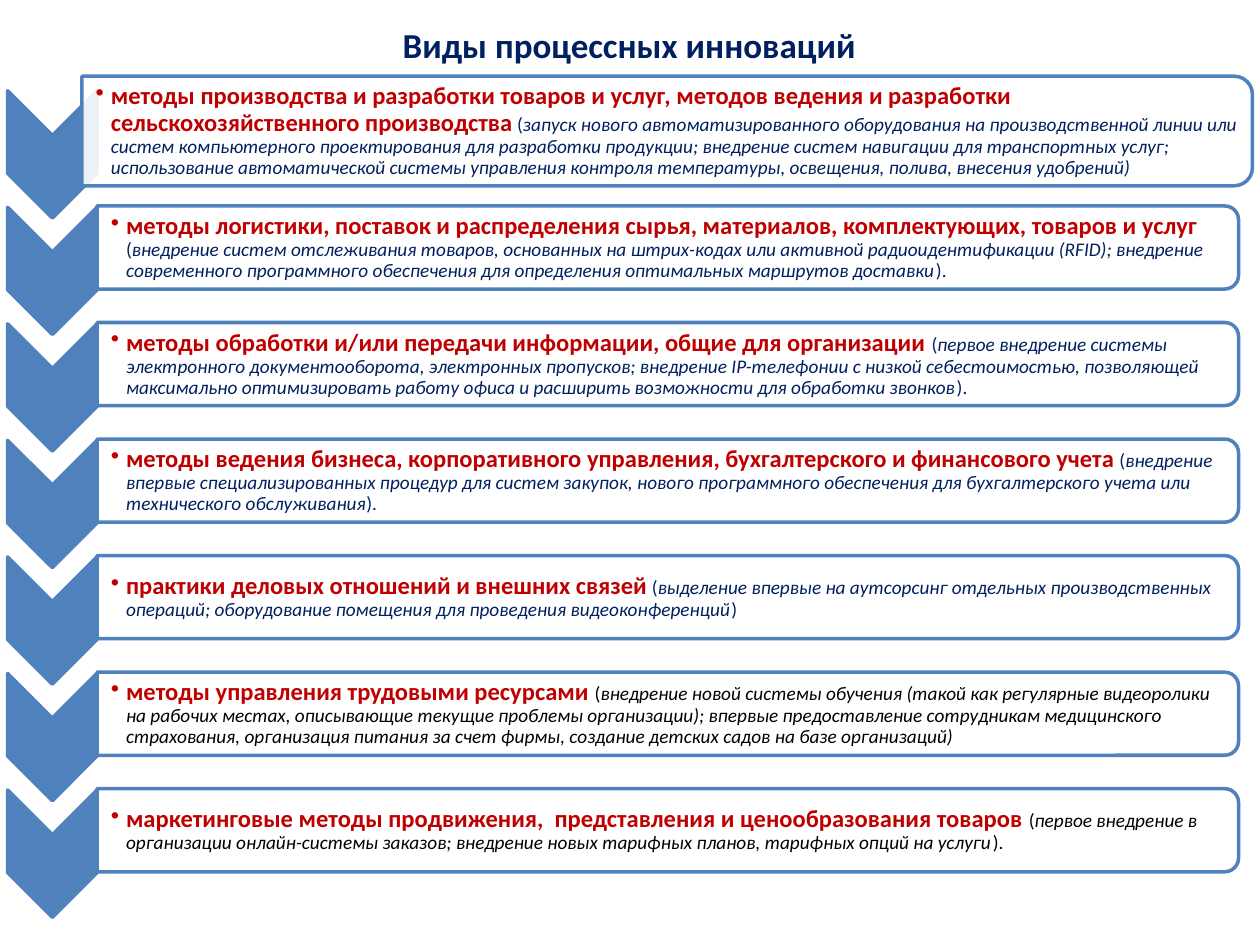
from lxml import etree
from pptx import Presentation
from pptx.dml.color import RGBColor
from pptx.enum.shapes import MSO_SHAPE
from pptx.enum.text import MSO_ANCHOR, PP_ALIGN
from pptx.oxml.ns import qn
from pptx.util import Inches, Pt

CHEVRON = MSO_SHAPE.CHEVRON
ROUNDED_END = MSO_SHAPE.ROUND_2_SAME_RECTANGLE
MIDDLE = MSO_ANCHOR.MIDDLE
CENTER = PP_ALIGN.CENTER

COLORS = {"blue": "4F81BD", "white": "FFFFFF", "navy": "002060",
          "red": "C00000", "black": "000000"}

# Heading, opening bracket, examples, closing, colour of the examples
METHODS = [
    ("методы производства и разработки товаров и услуг, методов ведения и разработки "
     "сельскохозяйственного производства", " (",
     "запуск нового автоматизированного оборудования на производственной линии или систем "
     "компьютерного проектирования для разработки продукции; внедрение систем навигации для "
     "транспортных услуг; использование автоматической системы управления контроля температуры, "
     "освещения, полива, внесения удобрений)", "", "navy"),
    ("методы логистики, поставок и распределения сырья, материалов, комплектующих, товаров и услуг",
     " (",
     "внедрение систем отслеживания товаров, основанных на штрих-кодах или активной "
     "радиоидентификации (RFID); внедрение современного программного обеспечения для "
     "определения оптимальных маршрутов доставки", ").", "navy"),
    ("методы обработки и/или передачи информации, общие для организации ", "(",
     "первое внедрение системы электронного документооборота, электронных пропусков; внедрение "
     "IP-телефонии с низкой себестоимостью, позволяющей максимально оптимизировать работу офиса "
     "и расширить возможности для обработки звонков", ").", "navy"),
    ("методы ведения бизнеса, корпоративного управления, бухгалтерского и финансового учета", " (",
     "внедрение впервые специализированных процедур для систем закупок, нового программного "
     "обеспечения для бухгалтерского учета или технического обслуживания", ").", "navy"),
    ("практики деловых отношений и внешних связей", " (",
     "выделение впервые на аутсорсинг отдельных производственных операций; оборудование "
     "помещения для проведения видеоконференций", ")", "navy"),
    ("методы управления трудовыми ресурсами ", "(",
     "внедрение новой системы обучения (такой как регулярные видеоролики на рабочих местах, "
     "описывающие текущие проблемы организации); впервые предоставление сотрудникам "
     "медицинского страхования, организация питания за счет фирмы, создание детских садов "
     "на базе организаций)", "", "black"),
    ("маркетинговые методы продвижения,  представления и ценообразования товаров ", "(",
     "первое внедрение в организации онлайн-системы заказов; внедрение новых тарифных планов, "
     "тарифных опций на услуги", ").", "black"),
]


def add_text(paragraph, text, size=11, color="navy", bold=False, italic=False):
    run = paragraph.add_run()
    run.text = text
    run.font.name = "Calibri"
    run.font.size = Pt(size)
    run.font.bold = bold
    run.font.italic = italic
    run.font.color.rgb = RGBColor.from_string(COLORS[color])


def add_turned(preset, center_x, center_y, width, height, fill):
    """Add a preset turned by 90 degrees; width and height are before the turn."""
    shape = slide.shapes.add_shape(preset, Inches(center_x - width / 2),
                                   Inches(center_y - height / 2), Inches(width), Inches(height))
    shape.rotation = 90
    shape.shadow.inherit = False
    shape.fill.solid()
    shape.fill.fore_color.rgb = RGBColor.from_string(COLORS[fill])
    shape.line.color.rgb = RGBColor.from_string(COLORS["blue"])
    shape.line.width = Pt(2)
    return shape


prs = Presentation()
prs.slide_width, prs.slide_height = Inches(10), Inches(7.5)
slide = prs.slides.add_slide(prs.slide_layouts[5])

# Title
title = slide.shapes.title
title.left, title.top, title.width, title.height = (
    Inches(0.43), Inches(0.13), Inches(9.13), Inches(0.44))
title.text_frame.vertical_anchor = MIDDLE
heading_line = title.text_frame.paragraphs[0]
heading_line.alignment = CENTER
add_text(heading_line, "Виды процессных инноваций", size=20, bold=True)

# One row per method: chevron, frame and text
FIRST_CENTER, PITCH = 1.04, 0.925
for row, (heading, opening, examples, closing, color) in enumerate(METHODS):
    center_y = FIRST_CENTER + row * PITCH
    # The first row is larger than the others
    if row == 0:
        frame_left, frame_length, frame_depth, text_width, text_height = 0.65, 9.29, 0.87, 9.25, 0.78
    else:
        frame_left, frame_length, frame_depth, text_width, text_height = 0.77, 9.06, 0.66, 9.02, 0.59

    add_turned(CHEVRON, 0.415, center_y + 0.185, 1.01, 0.71, "blue")
    frame = add_turned(ROUNDED_END, frame_left + frame_length / 2, center_y,
                       frame_depth, frame_length, "white")
    frame_color = frame.fill._xPr.find(qn("a:solidFill"))[0]
    etree.SubElement(frame_color, qn("a:alpha"), val="90000")

    label = slide.shapes.add_textbox(Inches(frame_left), Inches(center_y - text_height / 2),
                                     Inches(text_width), Inches(text_height)).text_frame
    label.word_wrap = True
    label.vertical_anchor = MIDDLE
    label.margin_left = Inches(0.11)
    label.margin_top = label.margin_right = label.margin_bottom = Inches(0.01)

    method = label.paragraphs[0]
    method.line_spacing = 0.9
    method.space_after = Pt(2)
    properties = method._p.get_or_add_pPr()
    properties.set("marL", str(Inches(0.12)))
    properties.set("indent", str(Inches(-0.12)))
    etree.SubElement(properties, qn("a:buChar"), char="•")

    add_text(method, heading, size=14, color="red", bold=True)
    add_text(method, opening, color=color)
    add_text(method, examples, color=color, italic=True)
    if closing:
        add_text(method, closing, color=color)

prs.save("out.pptx")
